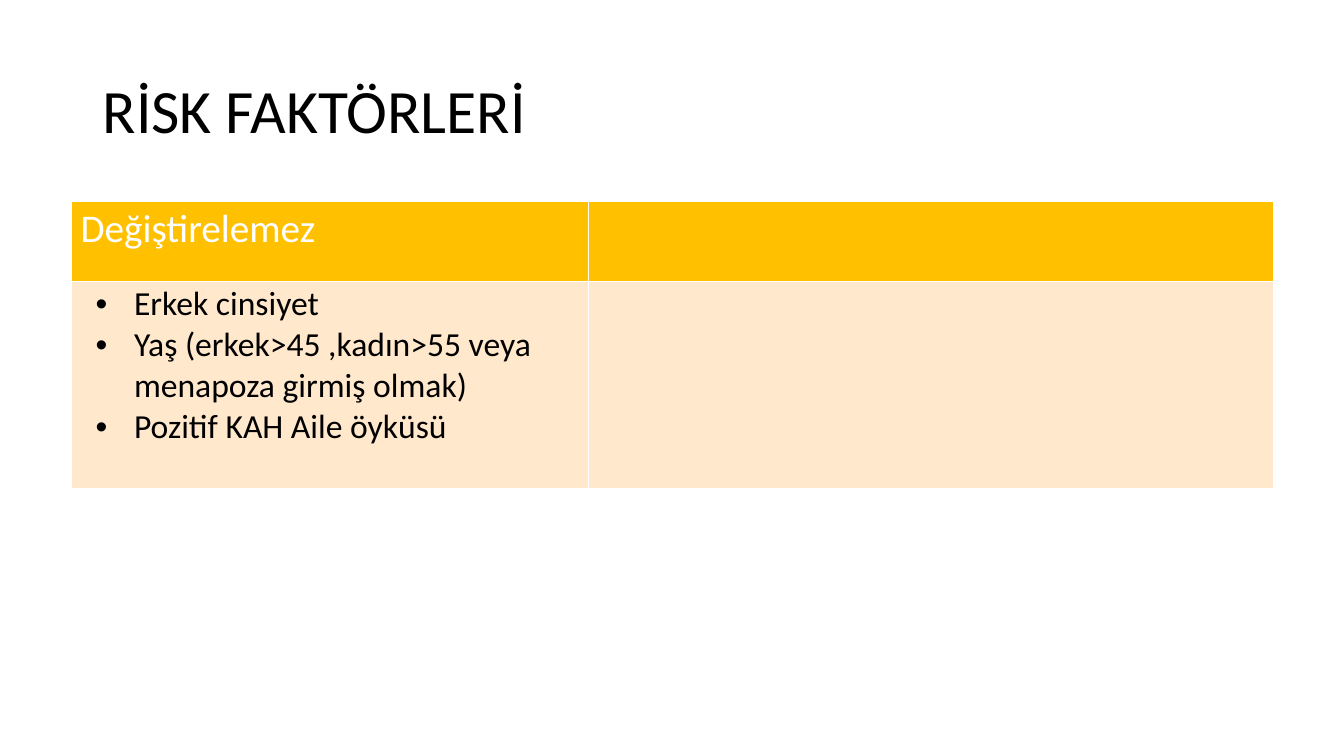
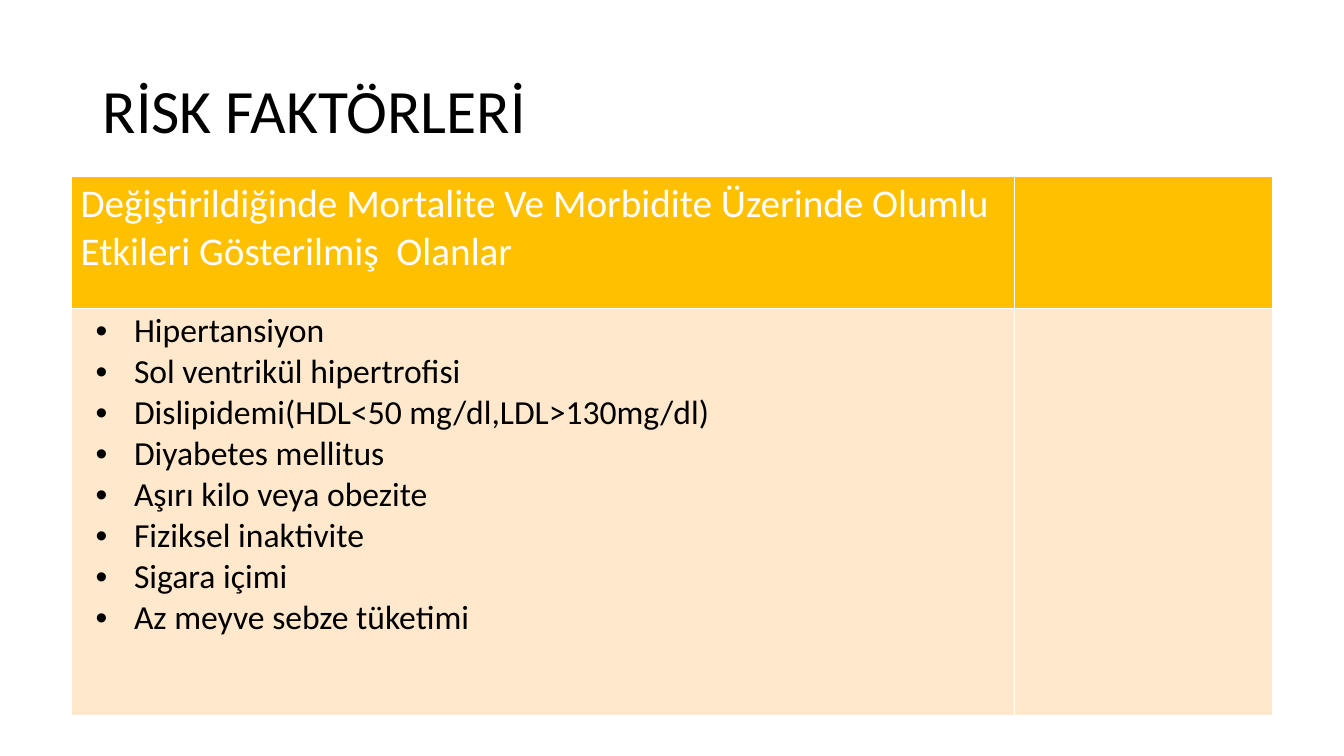
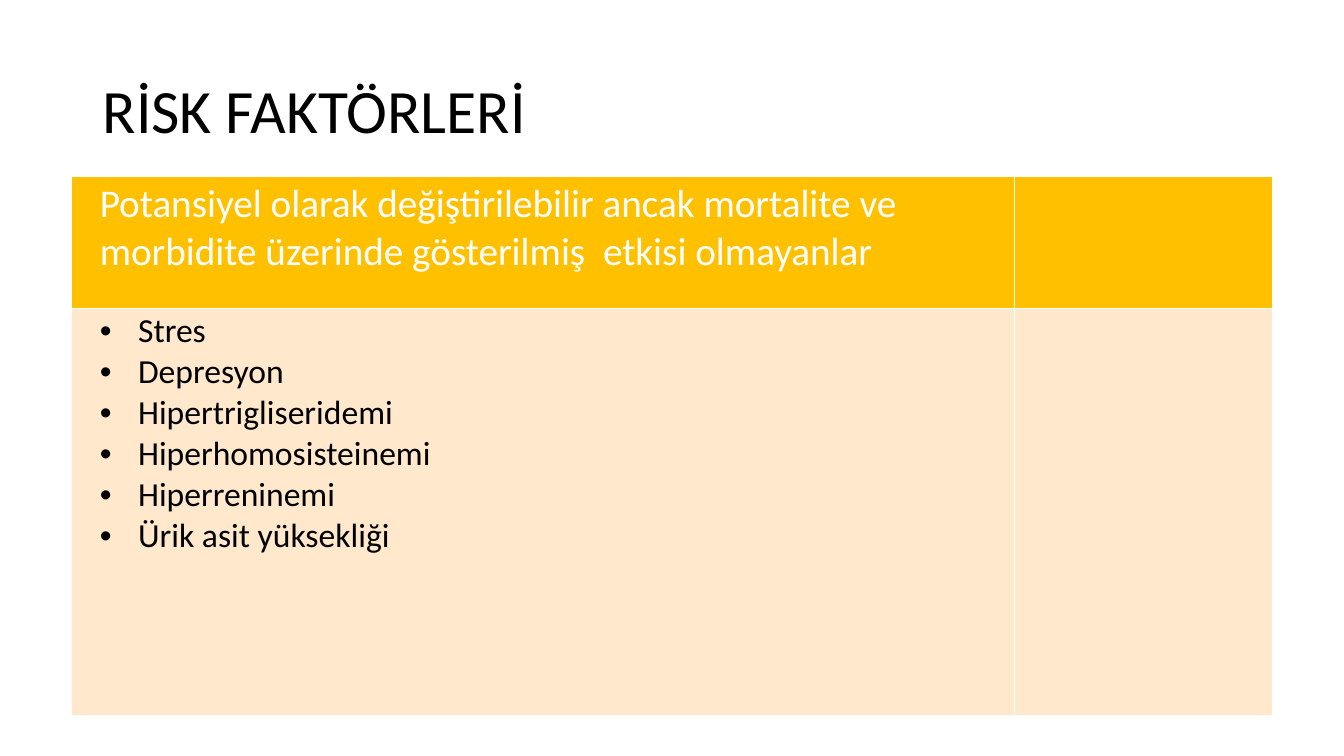
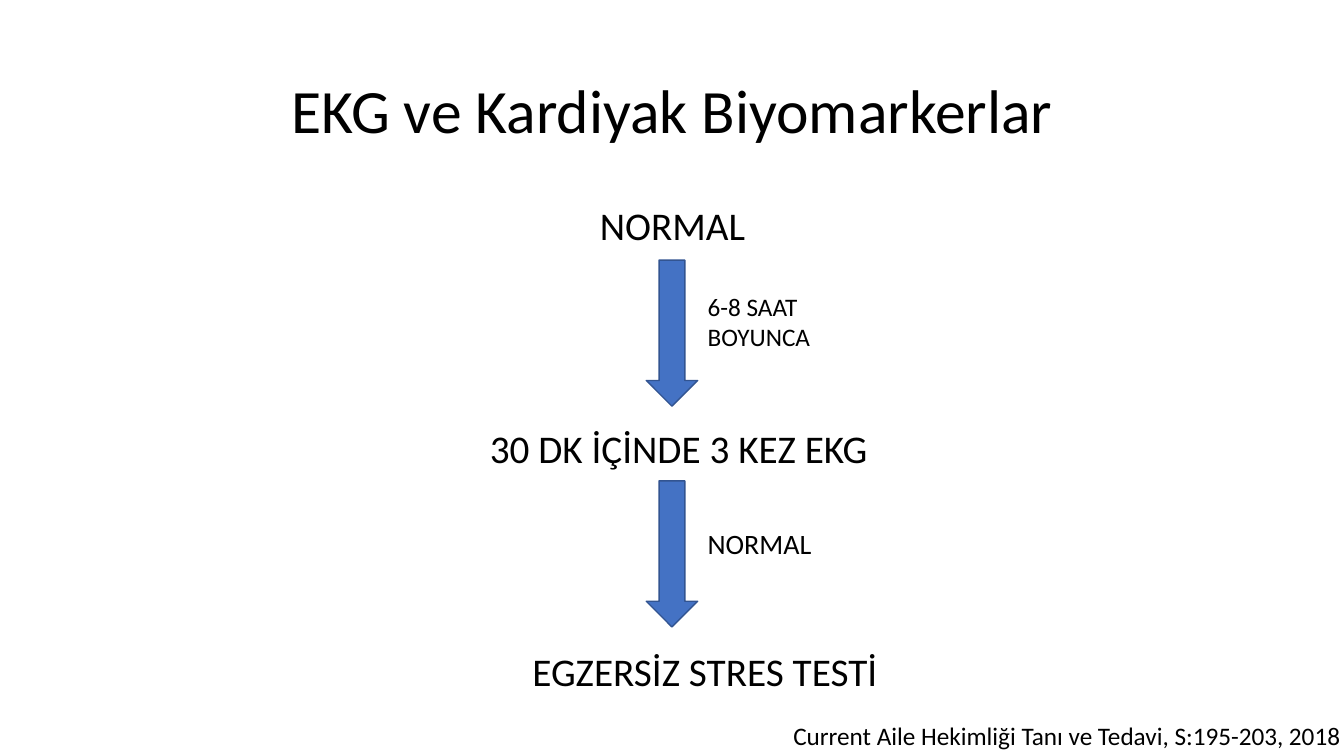
from dataclasses import dataclass

from pptx import Presentation
from pptx import util as u
from pptx.dml.color import RGBColor
from pptx.enum import shapes, text
from pptx.oxml.ns import qn
from lxml import etree

EMU_PER_PX = 9144
FONT = "Calibri"
TITLE_SIZE, HEADING_SIZE, LIST_SIZE, NOTE_SIZE = 44, 28, 24, 18
BULLET_INDENT = 38
COLOURS = {
    "page": "FFFFFF",
    "ink": "000000",
    "header": "FFC000",
    "body": "FFE8CC",
    "on_header": "FFFFFF",
    "border": "FFFFFF",
    "arrow": "4472C4",
    "arrow_line": "325491",
}
LEFT, CENTRE = text.PP_ALIGN.LEFT, text.PP_ALIGN.CENTER


@dataclass(frozen=True)
class Area:
    left: int
    top: int
    width: int
    height: int

    def emu(self) -> list:
        return [px(n) for n in (self.left, self.top, self.width, self.height)]


@dataclass(frozen=True)
class RiskTable:
    top: int
    columns: tuple
    rows: tuple
    header: str
    factors: tuple
    header_margin: int = 9
    list_margin: int = 24


@dataclass(frozen=True)
class Label:
    area: Area
    words: str
    size: int = HEADING_SIZE
    align: text.PP_ALIGN = LEFT
    spacing: float = 1.0
    anchor: text.MSO_ANCHOR = text.MSO_ANCHOR.TOP


TITLE_AREA = Area(92, 40, 1150, 145)
TABLE_LEFT = 71
RISK_TITLE = "RİSK FAKTÖRLERİ"
RISK_TABLES = (
    RiskTable(
        200, (513, 679), (79, 206), "Değiştirelemez",
        (
            "Erkek cinsiyet",
            "Yaş (erkek>45 ,kadın>55 veya menapoza girmiş olmak)",
            "Pozitif KAH Aile öyküsü",
        ),
    ),
    RiskTable(
        175, (935, 256), (131, 404),
        "Değiştirildiğinde Mortalite Ve Morbidite Üzerinde Olumlu "
        "Etkileri Gösterilmiş  Olanlar",
        (
            "Hipertansiyon",
            "Sol ventrikül hipertrofisi",
            "Dislipidemi(HDL<50 mg/dl,LDL>130mg/dl)",
            "Diyabetes mellitus",
            "Aşırı kilo veya obezite",
            "Fiziksel inaktivite",
            "Sigara içimi",
            "Az meyve sebze tüketimi",
        ),
    ),
    RiskTable(
        175, (935, 256), (131, 404),
        "Potansiyel olarak değiştirilebilir ancak mortalite ve "
        "morbidite üzerinde gösterilmiş  etkisi olmayanlar",
        (
            "Stres",
            "Depresyon",
            "Hipertrigliseridemi",
            "Hiperhomosisteinemi",
            "Hiperreninemi",
            "Ürik asit yüksekliği",
        ),
        header_margin=28, list_margin=28,
    ),
)
FLOW_TITLE = "EKG ve Kardiyak Biyomarkerlar"
FLOW_ARROWS = tuple(Area(641, top, 51, 145) for top in (258, 477))
FLOW_LABELS = (
    Label(Area(92, 200, 1150, 476), "NORMAL", align=CENTRE, spacing=0.9),
    Label(Area(692, 284, 171, 71), "6-8 SAAT BOYUNCA", NOTE_SIZE),
    Label(Area(476, 416, 486, 57), "30 DK İÇİNDE 3 KEZ EKG"),
    Label(Area(692, 517, 486, 44), "NORMAL", 20),
    Label(Area(456, 637, 486, 57), "EGZERSİZ STRES TESTİ", align=CENTRE),
    Label(Area(777, 710, 667, 40),
          "Current Aile Hekimliği Tanı ve Tedavi, S:195-203, 2018",
          NOTE_SIZE),
)


def px(length: int) -> u.Emu:
    return u.Emu(length * EMU_PER_PX)


def rgb(name: str) -> RGBColor:
    return RGBColor.from_string(COLOURS[name])


def add_span(para, words: str, size: int, colour: str = "ink") -> None:
    span = para.add_run()
    span.text = words
    span.font.name = FONT
    span.font.size = u.Pt(size)
    span.font.color.rgb = rgb(colour)


def add_label(page, label: Label) -> None:
    frame = page.shapes.add_textbox(*label.area.emu()).text_frame
    frame.word_wrap = True
    frame.vertical_anchor = label.anchor
    para = frame.paragraphs[0]
    para.alignment = label.align
    para.line_spacing = label.spacing
    add_span(para, label.words, label.size)


def add_page(deck, title: str, align: text.PP_ALIGN = LEFT):
    """Add a blank page with the shared background and title."""
    page = deck.slides.add_slide(deck.slide_layouts[6])
    page.background.fill.solid()
    page.background.fill.fore_color.rgb = rgb("page")
    add_label(page, Label(TITLE_AREA, title, TITLE_SIZE, align, 0.9,
                          text.MSO_ANCHOR.MIDDLE))
    return page


def add_bullet(para) -> None:
    properties = para._p.get_or_add_pPr()
    properties.set("marL", str(px(BULLET_INDENT)))
    properties.set("indent", str(-px(BULLET_INDENT)))
    etree.SubElement(properties, qn("a:buFont"), typeface="Arial")
    etree.SubElement(properties, qn("a:buChar"), char="•")


def style_cell(cell, fill: str, margin: int, top_margin: int) -> None:
    """Set borders before the fill, as the schema orders them."""
    cell.margin_left, cell.margin_top = px(margin), px(top_margin)
    cell.margin_right = cell.margin_bottom = 0
    properties = cell._tc.get_or_add_tcPr()
    for side in ("lnL", "lnR", "lnT", "lnB"):
        line = etree.SubElement(properties, qn(f"a:{side}"), w=str(u.Pt(1)))
        solid = etree.SubElement(line, qn("a:solidFill"))
        etree.SubElement(solid, qn("a:srgbClr"), val=COLOURS["border"])
    cell.fill.solid()
    cell.fill.fore_color.rgb = rgb(fill)


def add_risk_table(page, risk: RiskTable) -> None:
    area = Area(TABLE_LEFT, risk.top, sum(risk.columns), sum(risk.rows))
    table = page.shapes.add_table(2, 2, *area.emu()).table
    table.first_row = table.horz_banding = False
    for column, width in zip(table.columns, risk.columns):
        column.width = px(width)
    for row, height in zip(table.rows, risk.rows):
        row.height = px(height)
    for column in range(2):
        style_cell(table.cell(0, column), "header", risk.header_margin, 4)
        style_cell(table.cell(1, column), "body", risk.list_margin, 2)

    header = table.cell(0, 0).text_frame.paragraphs[0]
    add_span(header, risk.header, HEADING_SIZE, "on_header")
    frame = table.cell(1, 0).text_frame
    for number, factor in enumerate(risk.factors):
        para = frame.add_paragraph() if number else frame.paragraphs[0]
        add_bullet(para)
        add_span(para, factor, LIST_SIZE)


def add_down_arrow(page, area: Area) -> None:
    arrow = page.shapes.add_shape(shapes.MSO_SHAPE.DOWN_ARROW, *area.emu())
    arrow.shadow.inherit = False
    arrow.fill.solid()
    arrow.fill.fore_color.rgb = rgb("arrow")
    arrow.line.color.rgb = rgb("arrow_line")
    arrow.line.width = u.Pt(1)


def main() -> None:
    deck = Presentation()
    deck.slide_width, deck.slide_height = px(1333), px(750)
    for risk in RISK_TABLES:
        add_risk_table(add_page(deck, RISK_TITLE), risk)

    flow = add_page(deck, FLOW_TITLE, CENTRE)
    for area in FLOW_ARROWS:
        add_down_arrow(flow, area)
    for label in FLOW_LABELS:
        add_label(flow, label)
    deck.save("out.pptx")


if __name__ == "__main__":
    main()
